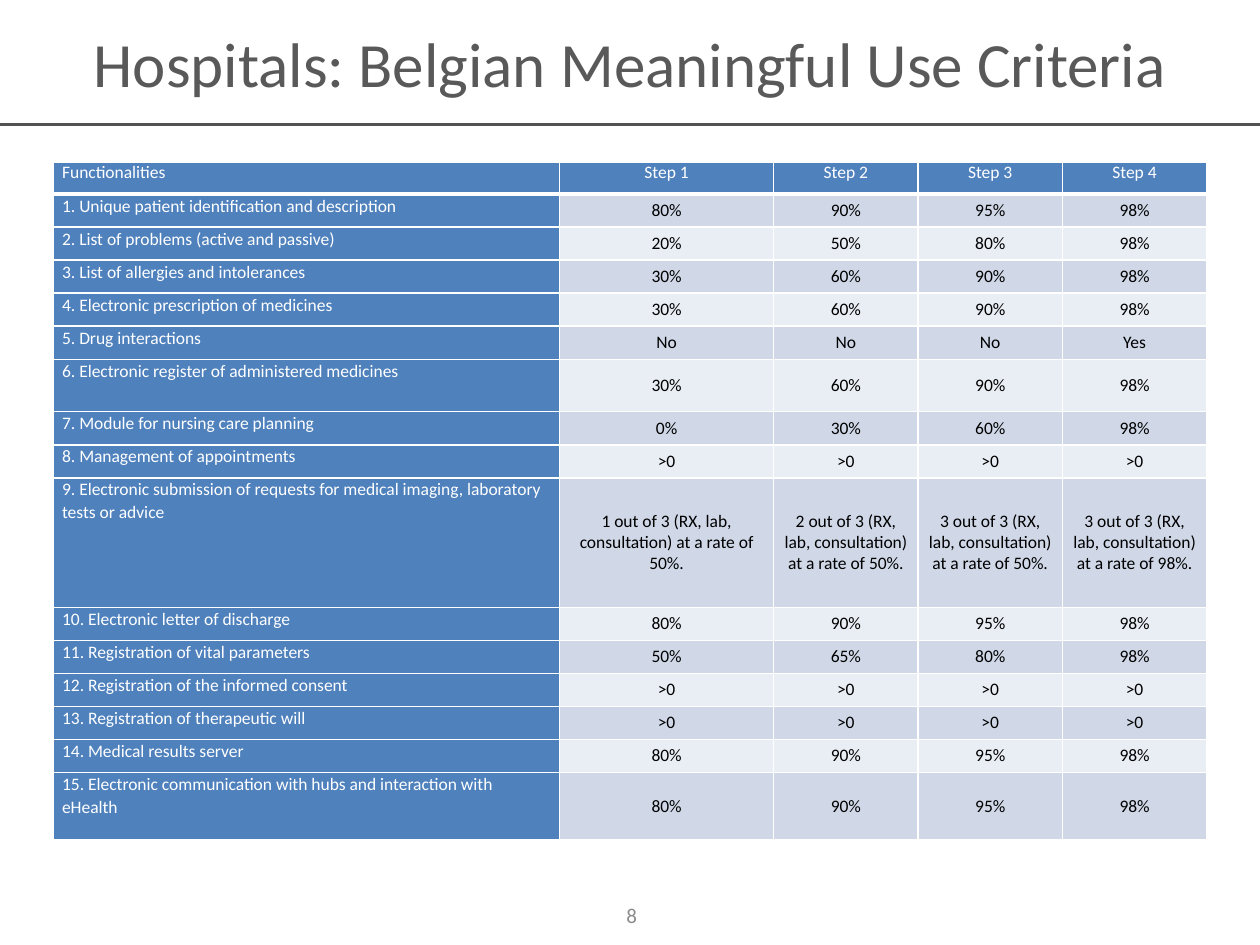
import dataclasses

import pptx
import pptx.dml.color
import pptx.enum.shapes
import pptx.enum.text
import pptx.oxml
import pptx.oxml.ns
import pptx.util

Pt = pptx.util.Pt
ALIGN = pptx.enum.text.PP_ALIGN
ANCHOR = pptx.enum.text.MSO_ANCHOR


@dataclasses.dataclass(frozen=True)
class Theme:
    font: str = "Calibri"
    title: str = "595959"
    rule: str = "525252"
    number: str = "8C8C8C"
    accent: str = "4F81BD"
    bands: tuple = ("D0D8E8", "E9EDF4")
    white: str = "FFFFFF"
    black: str = "000000"
    title_size: int = 36
    number_size: int = 12
    cell_size: int = 10


THEME = Theme()
SLIDE_W, SLIDE_H = 720, 540
TITLE_H = 71.3
TABLE_LEFT, TABLE_TOP = 30.5, 92.5
COL_WIDTHS = [289.2, 122.4, 82.5, 82.5, 82.5]
ROW_H = 18.9
TALL_ROWS = {0: 18.4, 6: 30, 9: 74, 15: 38.5}


def requests(count, rate):
    return f"{count} out of 3 (RX, lab, consultation) at a rate of {rate}%."


HEADER = ["Functionalities", "Step 1", "Step 2", "Step 3", "Step 4"]
CRITERIA = [
    ["Unique patient identification and description", "80%", "90%", "95%", "98%"],
    ["List of problems (active and passive)", "20%", "50%", "80%", "98%"],
    ["List of allergies and intolerances", "30%", "60%", "90%", "98%"],
    ["Electronic prescription of medicines", "30%", "60%", "90%", "98%"],
    ["Drug interactions", "No", "No", "No", "Yes"],
    ["Electronic register of administered medicines", "30%", "60%", "90%", "98%"],
    ["Module for nursing care planning", "0%", "30%", "60%", "98%"],
    ["Management of appointments"] + [">0"] * 4,
    ["Electronic submission of requests for medical imaging, laboratory tests or advice",
     requests(1, 50), requests(2, 50), requests(3, 50), requests(3, 98)],
    ["Electronic letter of discharge", "80%", "90%", "95%", "98%"],
    ["Registration of vital parameters", "50%", "65%", "80%", "98%"],
    ["Registration of the informed consent"] + [">0"] * 4,
    ["Registration of therapeutic will"] + [">0"] * 4,
    ["Medical results server", "80%", "90%", "95%", "98%"],
    ["Electronic communication with hubs and interaction with eHealth",
     "80%", "90%", "95%", "98%"],
]


def rgb(color):
    return pptx.dml.color.RGBColor.from_string(color)


def write_text(tf, text, *, size, color, align=ALIGN.CENTER, after=0, spacing=None):
    tf.word_wrap = True
    p = tf.paragraphs[0]
    p.alignment = align
    p.space_after = Pt(after)
    if spacing:
        p.line_spacing = spacing
    r = p.add_run()
    r.text = text
    r.font.name = THEME.font
    r.font.size = Pt(size)
    r.font.bold = False
    r.font.color.rgb = rgb(color)


def add_title(slide, text):
    sp = slide.shapes.title
    sp.left, sp.top, sp.width, sp.height = Pt(0), Pt(0), Pt(SLIDE_W), Pt(TITLE_H)
    tf = sp.text_frame
    tf.auto_size = pptx.enum.text.MSO_AUTO_SIZE.NONE
    tf.vertical_anchor = ANCHOR.MIDDLE
    write_text(tf, text, size=THEME.title_size, color=THEME.title)


def add_rule(slide, y):
    line = slide.shapes.add_connector(
        pptx.enum.shapes.MSO_CONNECTOR.STRAIGHT, Pt(0), Pt(y), Pt(SLIDE_W), Pt(y))
    line.line.color.rgb = rgb(THEME.rule)
    line.line.width = Pt(1.5)
    effects = pptx.oxml.parse_xml(f"<a:effectLst {pptx.oxml.ns.nsdecls('a')}/>")
    line._element.spPr.append(effects)


def set_borders(cell, bottom):
    tc_pr = cell._tc.get_or_add_tcPr()
    widths = {"lnL": 1, "lnR": 1, "lnT": 1, "lnB": bottom}
    for i, (tag, width) in enumerate(widths.items()):
        tc_pr.insert(i, pptx.oxml.parse_xml(
            f"<a:{tag} {pptx.oxml.ns.nsdecls('a')} w=\"{Pt(width)}\"><a:solidFill>"
            f"<a:srgbClr val=\"{THEME.white}\"/></a:solidFill></a:{tag}>"))


def format_cell(cell, text, row, col):
    is_header, is_label = row == 0, col == 0
    is_value = not (is_header or is_label)
    cell.margin_left = cell.margin_right = Pt(5)
    cell.margin_top = cell.margin_bottom = Pt(0)
    cell.vertical_anchor = ANCHOR.MIDDLE if is_value else ANCHOR.TOP
    cell.fill.solid()
    cell.fill.fore_color.rgb = rgb(THEME.bands[(row - 1) % 2] if is_value else THEME.accent)
    set_borders(cell, bottom=3 if is_header else 1)
    write_text(cell.text_frame, text, size=THEME.cell_size,
               color=THEME.black if is_value else THEME.white,
               align=ALIGN.LEFT if is_label else ALIGN.CENTER, after=2,
               spacing=1.07 if is_label and not is_header else None)


def add_criteria_table(slide):
    rows = [HEADER] + [[f"{n}. {label}", *steps]
                       for n, (label, *steps) in enumerate(CRITERIA, 1)]
    heights = [TALL_ROWS.get(i, ROW_H) for i in range(len(rows))]
    table = slide.shapes.add_table(
        len(rows), len(COL_WIDTHS), Pt(TABLE_LEFT), Pt(TABLE_TOP),
        Pt(sum(COL_WIDTHS)), Pt(sum(heights))).table
    for column, width in zip(table.columns, COL_WIDTHS):
        column.width = Pt(width)
    for i, (values, height) in enumerate(zip(rows, heights)):
        table.rows[i].height = Pt(height)
        for j, text in enumerate(values):
            format_cell(table.cell(i, j), text, i, j)


def add_page_number(slide, text):
    sp = slide.shapes.add_textbox(Pt(277), Pt(508.5), Pt(168), Pt(28.8))
    sp.text_frame.vertical_anchor = ANCHOR.MIDDLE
    write_text(sp.text_frame, text, size=THEME.number_size, color=THEME.number)


def main():
    prs = pptx.Presentation()
    prs.slide_width, prs.slide_height = Pt(SLIDE_W), Pt(SLIDE_H)
    slide = prs.slides.add_slide(prs.slide_layouts.get_by_name("Title Only"))
    add_title(slide, "Hospitals: Belgian Meaningful Use Criteria")
    add_rule(slide, TITLE_H)
    add_criteria_table(slide)
    add_page_number(slide, "8")
    prs.save("out.pptx")


if __name__ == "__main__":
    main()
